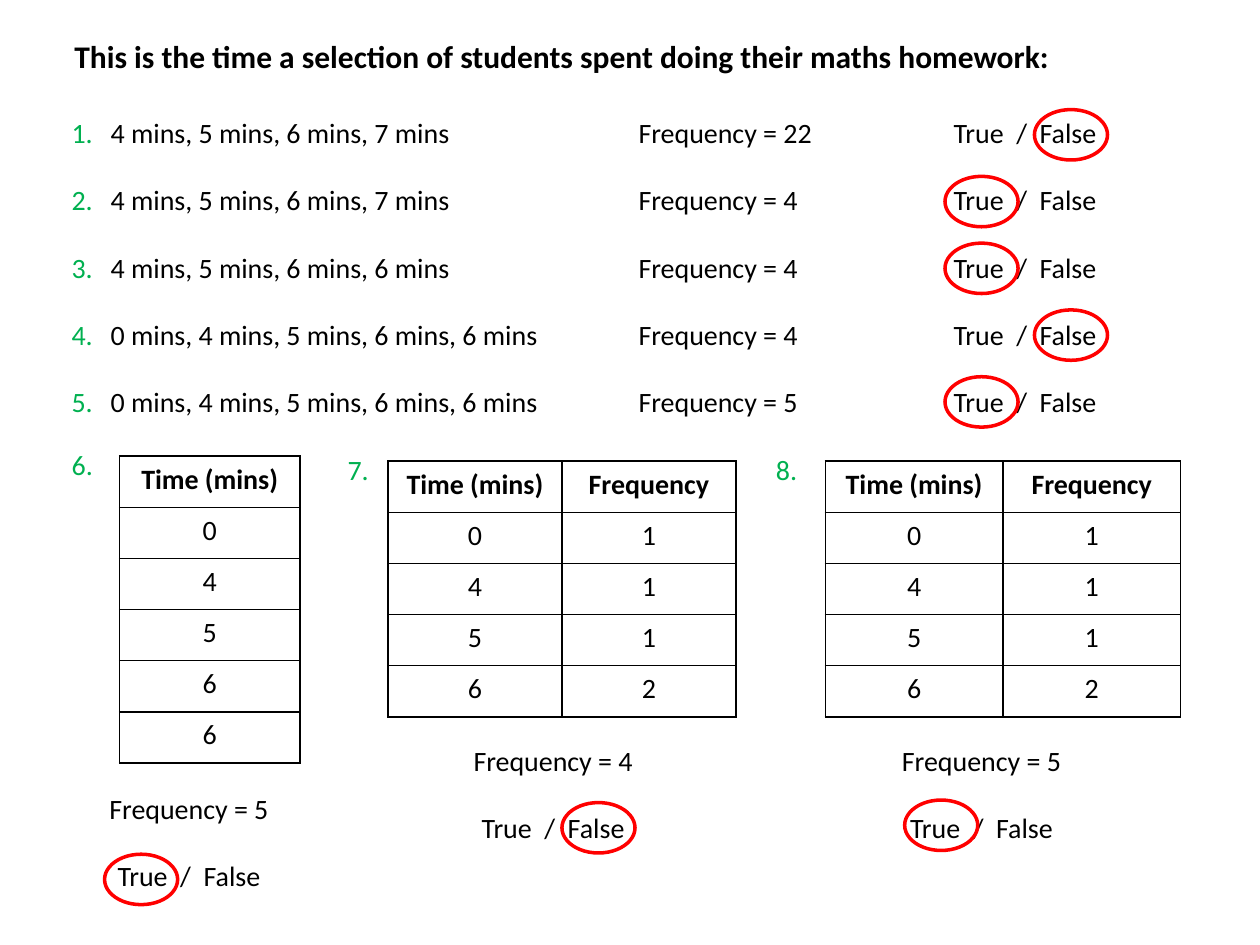
from lxml.etree import SubElement as Sub
from pptx import Presentation
from pptx.dml.color import RGBColor as RGB
from pptx.enum.shapes import MSO_SHAPE as SHAPE
from pptx.enum.text import MSO_ANCHOR as ANCHOR, PP_ALIGN as ALIGN
from pptx.oxml.ns import qn
from pptx.util import Inches, Pt

COLORS = {"text": "000000", "num": "00B050", "ring": "FF0000"}
FONTS = {
    "title": {"name": "Calibri", "size": Pt(18), "bold": True},
    "head": {"name": "Calibri", "size": Pt(16), "bold": True},
    "body": {"name": "Calibri", "size": Pt(16), "bold": False},
}
GAP = Pt(19.2)
STOPS = (0.31, 4.5, 7)
CHOICE = "True  /  False"


class Quiz:
    def __init__(self, slide):
        self.slide = slide

    def add_text(self, par, text, style="body", color="text"):
        run = par.add_run()
        run.text = text
        for key, value in FONTS[style].items():
            setattr(run.font, key, value)
        run.font.color.rgb = RGB.from_string(COLORS[color])

    def title(self, text, *box):
        shape = self.slide.shapes.title
        self.place(shape, box)
        frame = shape.text_frame
        frame.word_wrap = True
        frame.vertical_anchor = ANCHOR.TOP
        par = frame.paragraphs[0]
        par.alignment = ALIGN.LEFT
        self.add_text(par, text, "title")

    def place(self, shape, box):
        for key, value in zip(("left", "top", "width", "height"), box):
            setattr(shape, key, Inches(value))

    def box(self, lines, *box, wrap=False, align=ALIGN.LEFT, stops=()):
        """Each line is a list of (text, color) runs."""
        frame = self.slide.shapes.add_textbox(*map(Inches, box)).text_frame
        frame.word_wrap = wrap
        for i, line in enumerate(lines):
            par = frame.add_paragraph() if i else frame.paragraphs[0]
            par.alignment = align
            if i:
                par.space_before = GAP
            if stops:
                tabs = Sub(par._p.get_or_add_pPr(), qn("a:tabLst"))
                for stop in stops:
                    Sub(tabs, qn("a:tab"), pos=str(Inches(stop)), algn="l")
            for text, color in line:
                self.add_text(par, text, color=color)

    def border(self, cell):
        props = cell._tc.get_or_add_tcPr()
        for side in ("lnL", "lnR", "lnT", "lnB"):
            line = Sub(props, qn(f"a:{side}"), w=str(Pt(1)))
            fill = Sub(line, qn("a:solidFill"))
            Sub(fill, qn("a:srgbClr"), val=COLORS["text"])

    def table(self, rows, left, top, col, row=0.406):
        high, wide = len(rows), len(rows[0])
        table = self.slide.shapes.add_table(
            high, wide, Inches(left), Inches(top),
            Inches(col * wide), Inches(row * high)).table
        table.first_row = table.horz_banding = False
        for part in table.columns:
            part.width = Inches(col)
        for part in table.rows:
            part.height = Inches(row)
        for r, values in enumerate(rows):
            for c, value in enumerate(values):
                cell = table.cell(r, c)
                self.border(cell)
                cell.fill.background()
                par = cell.text_frame.paragraphs[0]
                par.alignment = ALIGN.CENTER
                self.add_text(par, value, "body" if r else "head")

    def ring(self, left, top):
        shape = self.slide.shapes.add_shape(
            SHAPE.OVAL, *map(Inches, (left, top, 0.58, 0.4)))
        shape.shadow.inherit = False
        shape.fill.background()
        shape.line.color.rgb = RGB.from_string(COLORS["ring"])
        shape.line.width = Pt(2)


def main():
    deck = Presentation()
    deck.slide_width, deck.slide_height = Inches(10), Inches(7.5)
    quiz = Quiz(deck.slides.add_slide(deck.slide_layouts[5]))

    quiz.title("This is the time a selection of students spent doing their "
               "maths homework:", 0.49, 0.24, 9.07, 0.4)

    # Questions 1 to 5: times, frequency, answer
    asks = [
        ((4, 5, 6, 7), 22, False),
        ((4, 5, 6, 7), 4, True),
        ((4, 5, 6, 6), 4, True),
        ((0, 4, 5, 6, 6), 4, False),
        ((0, 4, 5, 6, 6), 5, True),
    ]
    lines = []
    for num, (times, freq, _) in enumerate(asks, 1):
        mins = ", ".join(f"{t} mins" for t in times)
        lines.append([(f"{num}.", "num"),
                      (f"\t{mins}\tFrequency = {freq}\t{CHOICE}", "text")])
    quiz.box(lines, 0.47, 0.87, 9.46, 2.79, wrap=True, stops=STOPS)

    # Questions 6 to 8: tables with a claim below
    single = [["Time (mins)"]] + [[t] for t in "04566"]
    double = [["Time (mins)", "Frequency"]] + [
        list(pair) for pair in zip("0456", "1112")]
    # number, its place, rows, table place and column, claim, its place
    blocks = [
        (6, (0.47, 3.5), single, (0.95, 3.62, 1.43), 5, (0.76, 6.23)),
        (7, (2.66, 3.54), double, (3.08, 3.66, 1.38), 4, (3.65, 5.85)),
        (8, (6.06, 3.54), double, (6.55, 3.66, 1.41), 5, (7.05, 5.85)),
    ]
    for num, spot, rows, grid, freq, foot in blocks:
        quiz.box([[(f"{num}.", "num")]], *spot, 0.42, 0.37)
        quiz.table(rows, *grid)
        quiz.box([[(f"Frequency = {freq}", "text")], [(CHOICE, "text")]],
                 *foot, 1.48, 0.91, align=ALIGN.CENTER)

    # Rings around the right answers
    for i, (_, _, right) in enumerate(asks):
        quiz.ring(7.5 if right else 8.21, 0.87 + 0.53 * i)
    for spot in ((0.83, 6.78), (4.46, 6.37), (7.18, 6.35)):
        quiz.ring(*spot)

    deck.save("out.pptx")


if __name__ == "__main__":
    main()
